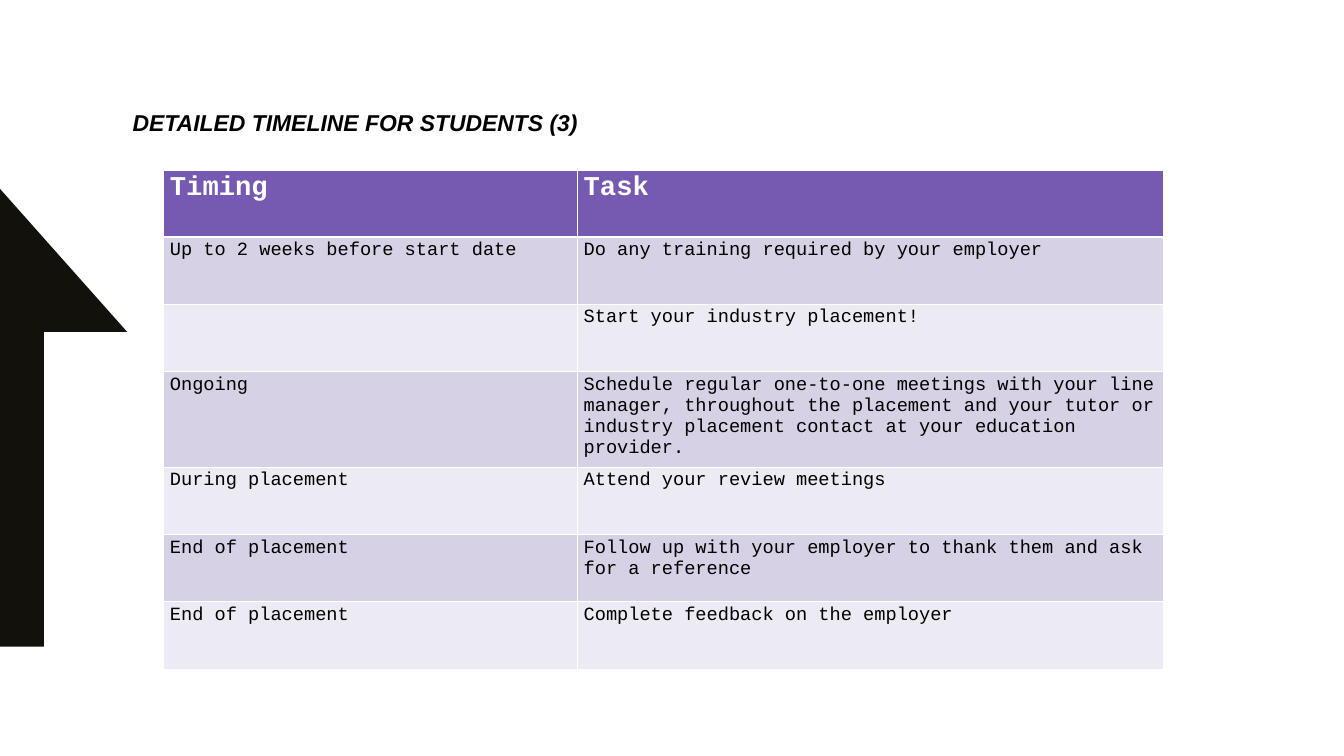
import pptx
import pptx.util
import pptx.dml.color
import pptx.enum.text
import pptx.oxml
import pptx.oxml.ns

PX = 9144  # EMU per px, 100 px to the inch


def color(value):
    return pptx.dml.color.RGBColor.from_string(value)


def add_border(cell, side, points):
    line = pptx.oxml.parse_xml(
        f'<a:{side} {pptx.oxml.ns.nsdecls("a")} w="{pptx.util.Pt(points)}">'
        f'<a:solidFill><a:srgbClr val="FFFFFF"/></a:solidFill></a:{side}>')
    cell._tc.get_or_add_tcPr().append(line)


presentation = pptx.Presentation()
presentation.slide_width = 2199 * PX
presentation.slide_height = 1237 * PX
slide = presentation.slides.add_slide(presentation.slide_layouts[6])

# Arrow cut off by the left edge
builder = slide.shapes.build_freeform(0, 309, scale=PX)
builder.add_line_segments([(208, 543), (72, 543), (72, 1058), (0, 1058)], close=True)
arrow = builder.convert_to_shape()
arrow.shadow.inherit = False
arrow.fill.solid()
arrow.fill.fore_color.rgb = color("12110C")
arrow.line.fill.background()

# Title
title = slide.shapes.add_textbox(217 * PX, 187 * PX, 1764 * PX, 91 * PX)
frame = title.text_frame
frame.word_wrap = True
frame.vertical_anchor = pptx.enum.text.MSO_ANCHOR.TOP
frame.margin_left = frame.margin_top = frame.margin_right = frame.margin_bottom = 0
paragraph = frame.paragraphs[0]
paragraph.text = "DETAILED TIMELINE FOR STUDENTS (3)"
paragraph.line_spacing = 0.8
paragraph.font.name = "Arial"
paragraph.font.size = pptx.util.Pt(27)
paragraph.font.bold = True
paragraph.font.italic = True
paragraph.font.color.rgb = color("000000")

# Timeline table
rows = [
    ("Timing", "Task"),
    ("Up to 2 weeks before start date", "Do any training required by your employer"),
    ("", "Start your industry placement!"),
    ("Ongoing", "Schedule regular one-to-one meetings with your line manager, "
                "throughout the placement and your tutor or industry placement "
                "contact at your education provider."),
    ("During placement", "Attend your review meetings"),
    ("End of placement", "Follow up with your employer to thank them and ask for a reference"),
    ("End of placement", "Complete feedback on the employer"),
]
ROW_HEIGHT = 110
table = slide.shapes.add_table(
    len(rows), 2, 268 * PX, 278 * PX, 1635 * PX, len(rows) * ROW_HEIGHT * PX).table
table.horz_banding = False
table.columns[0].width = 677 * PX
table.columns[1].width = 958 * PX

for row_index, texts in enumerate(rows):
    table.rows[row_index].height = ROW_HEIGHT * PX
    header = row_index == 0
    band = "D6D1E4" if row_index % 2 else "ECEAF2"
    for column_index, text in enumerate(texts):
        cell = table.cell(row_index, column_index)
        add_border(cell, "lnL", 1)
        add_border(cell, "lnR", 1)
        add_border(cell, "lnT", 3 if row_index == 1 else 1)
        add_border(cell, "lnB", 3 if header else 1)
        cell.fill.solid()
        cell.fill.fore_color.rgb = color("7659B0" if header else band)
        paragraph = cell.text_frame.paragraphs[0]
        paragraph.text = text
        paragraph.font.name = "Courier New"
        paragraph.font.size = pptx.util.Pt(32 if header else 22)
        paragraph.font.bold = header
        paragraph.font.color.rgb = color("FFFFFF" if header else "000000")

presentation.save("out.pptx")
